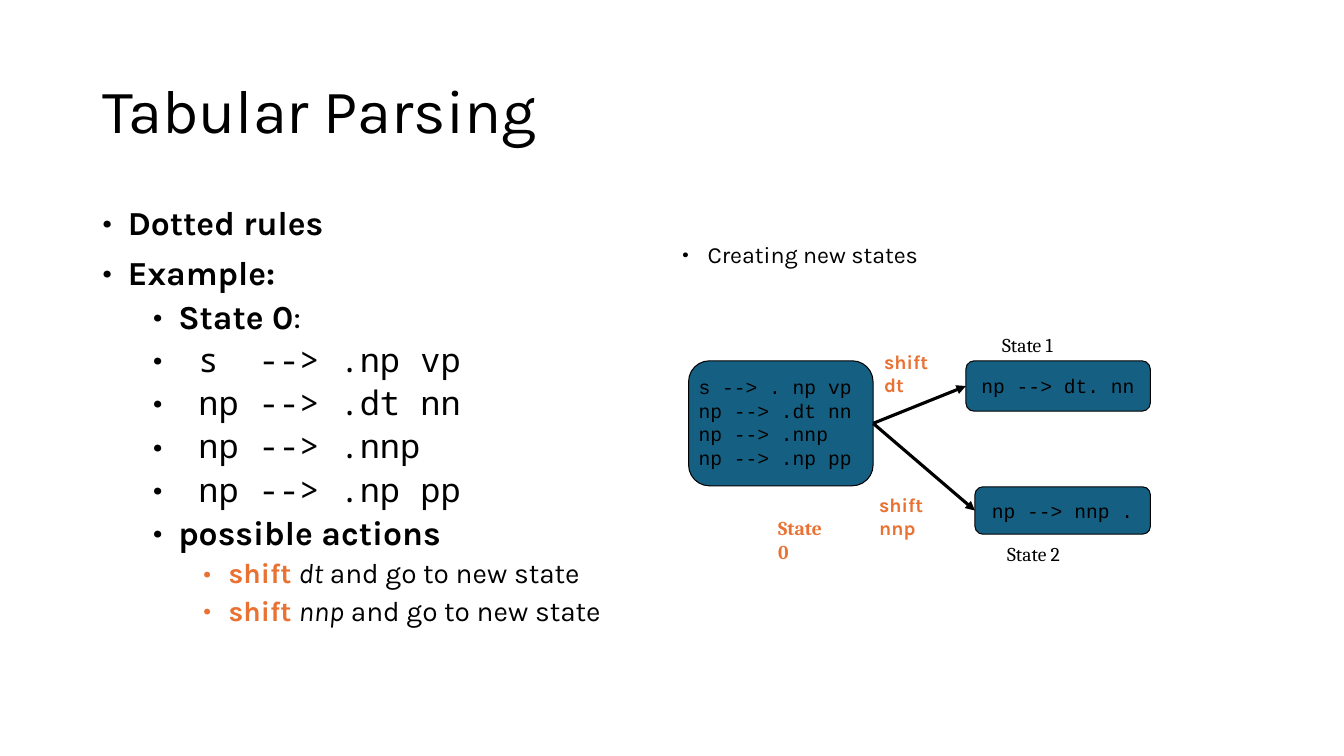
from lxml import etree
from pptx import Presentation
from pptx.dml.color import RGBColor
from pptx.enum.shapes import MSO_CONNECTOR, MSO_SHAPE
from pptx.enum.text import MSO_ANCHOR, PP_ALIGN
from pptx.oxml.ns import qn
from pptx.util import Inches, Pt

ROUNDED = MSO_SHAPE.ROUNDED_RECTANGLE
STRAIGHT = MSO_CONNECTOR.STRAIGHT
TOP, MIDDLE = MSO_ANCHOR.TOP, MSO_ANCHOR.MIDDLE
LEFT, CENTER = PP_ALIGN.LEFT, PP_ALIGN.CENTER

BLACK, ORANGE, TEAL = "000000", "E97132", "156082"
BULLET_INDENT = 0.25
LEVEL_STEP = 0.5

TITLE = {"name": "Karla", "size": Pt(44)}
BODY = {"name": "Karla", "size": Pt(24)}
BODY_BOLD = {**BODY, "bold": True}
RULE = {**BODY, "name": "Noto Sans Mono"}
ACTION = {**BODY, "size": Pt(20)}
ACTION_BOLD = {**ACTION, "bold": True, "color": ORANGE}
ACTION_ITALIC = {**ACTION, "italic": True}
HEADING = {"name": "Karla", "size": Pt(16.6)}
CODE = {"name": "Courier New", "size": Pt(14)}
STATE = {"name": "Cambria", "size": Pt(14)}
CURRENT_STATE = {**STATE, "bold": True, "color": ORANGE}
SHIFT = {"name": "Karla", "size": Pt(14), "bold": True, "color": ORANGE}

RULES = ["s  --> .np vp", "np --> .dt nn", "np --> .nnp", "np --> .np pp"]
START_RULES = ["s --> . np vp", *RULES[1:]]


def color(value):
    return RGBColor.from_string(value)


def add_run(paragraph, text, style):
    run = paragraph.add_run()
    run.text = text
    run.font.color.rgb = color(style.get("color", BLACK))
    for name, value in style.items():
        if name != "color":
            setattr(run.font, name, value)


def add_bullet(paragraph, level):
    paragraph.level = level
    properties = paragraph._p.get_or_add_pPr()
    properties.set("marL", str(Inches(BULLET_INDENT + level * LEVEL_STEP)))
    properties.set("indent", str(-Inches(BULLET_INDENT)))
    etree.SubElement(properties, qn("a:buFont")).set("typeface", "Karla")
    etree.SubElement(properties, qn("a:buChar")).set("char", "•")


def write_paragraphs(frame, paragraphs, level=None, **formats):
    for index, runs in enumerate(paragraphs):
        paragraph = frame.paragraphs[0] if index == 0 else frame.add_paragraph()
        for name, value in formats.items():
            setattr(paragraph, name, value)
        if level is not None:
            add_bullet(paragraph, level)
        for text, style in runs:
            add_run(paragraph, text, style)


def add_text(slide, box, paragraphs, wrap=True, anchor=TOP, **formats):
    text_box = slide.shapes.add_textbox(*map(Inches, box))
    text_box.text_frame.word_wrap = wrap
    text_box.text_frame.vertical_anchor = anchor
    write_paragraphs(text_box.text_frame, paragraphs, **formats)
    return text_box.text_frame


def add_title(slide, box):
    add_text(slide, box, [[("Tabular Parsing", TITLE)]], anchor=MIDDLE, line_spacing=0.9)


def add_outline(slide, box):
    items = [
        (0, [("Dotted rules", BODY_BOLD)]),
        (0, [("Example:", BODY_BOLD)]),
        (1, [("State 0", BODY_BOLD), (":", BODY)]),
        *[(1, [(f" {rule}", RULE)]) for rule in RULES],
        (1, [("possible actions", BODY_BOLD)]),
    ]
    for word in ("dt", "nnp"):
        items.append((2, [("shift ", ACTION_BOLD), (word, ACTION_ITALIC),
                          (" and go to new state", ACTION)]))
    frame = add_text(slide, box, [runs for level, runs in items], line_spacing=0.9)
    for paragraph, (level, runs) in zip(frame.paragraphs, items):
        paragraph.space_before = Pt(5 if level else 10)
        add_bullet(paragraph, level)


def add_state_box(slide, box):
    shape = slide.shapes.add_shape(ROUNDED, *map(Inches, box))
    shape.shadow.inherit = False
    shape.fill.solid()
    shape.fill.fore_color.rgb = color(TEAL)
    shape.line.color.rgb = color(BLACK)
    shape.line.width = Pt(0.75)
    return shape


def add_next_state(slide, box, rule):
    frame = add_state_box(slide, box).text_frame
    frame.word_wrap = False
    frame.vertical_anchor = MIDDLE
    write_paragraphs(frame, [[(rule, CODE)]], alignment=CENTER)


def add_arrow(slide, start, end):
    arrow = slide.shapes.add_connector(STRAIGHT, *map(Inches, (*start, *end)))
    arrow.line.color.rgb = color(BLACK)
    arrow.line.width = Pt(2.25)
    etree.SubElement(arrow.line._get_or_add_ln(), qn("a:tailEnd")).set("type", "triangle")
    etree.SubElement(arrow._element.spPr, qn("a:effectLst"))


def add_state_diagram(slide, box):
    left, top, width, height = box
    right, bottom = left + width, top + height
    start_width, start_height = 1.83, 1.24
    start_right = left + start_width
    fork = (start_right, top + start_height / 2)

    add_state_box(slide, (left, top, start_width, start_height))
    add_text(slide, (left, top + 0.09, 1.73, 1.04),
             [[(rule, CODE)] for rule in START_RULES], wrap=False, alignment=LEFT)
    add_text(slide, (left + 0.79, top + 1.49, 0.77, 0.34), [[("State 0", CURRENT_STATE)]])

    branches = [
        ("np --> dt. nn", 1.83, 0.5, top, "State 1", (right - 1.57, top - 0.33),
         "shift dt", (start_right + 0.01, top - 0.16, 0.78, 0.34)),
        ("np --> nnp .", 1.74, 0.47, bottom - 0.47, "State 2", (right - 1.52, bottom + 0.03),
         "shift nnp", (start_right - 0.04, top + 1.26, 0.92, 0.34)),
    ]
    for rule, box_width, box_height, box_top, state, state_at, action, action_box in branches:
        box_left = right - box_width
        add_next_state(slide, (box_left, box_top, box_width, box_height), rule)
        add_text(slide, (*state_at, 0.74, 0.34), [[(state, STATE)]], wrap=False, alignment=LEFT)
        add_arrow(slide, fork, (box_left, box_top + box_height / 2))
        add_text(slide, action_box, [[(action, SHIFT)]])


def build_slide(presentation):
    slide = presentation.slides.add_slide(presentation.slide_layouts[6])
    add_title(slide, (0.92, 0.4, 11.5, 1.45))
    add_outline(slide, (0.92, 2, 11.5, 4.76))
    add_text(slide, (6.67, 2.41, 4.17, 0.33), [[("Creating new states", HEADING)]],
             level=0, line_spacing=0.7, space_before=Pt(10))
    add_state_diagram(slide, (6.83, 3.58, 4.58, 1.72))


def main():
    presentation = Presentation()
    presentation.slide_width = Inches(13.33)
    presentation.slide_height = Inches(7.5)
    build_slide(presentation)
    presentation.save("out.pptx")


if __name__ == "__main__":
    main()
